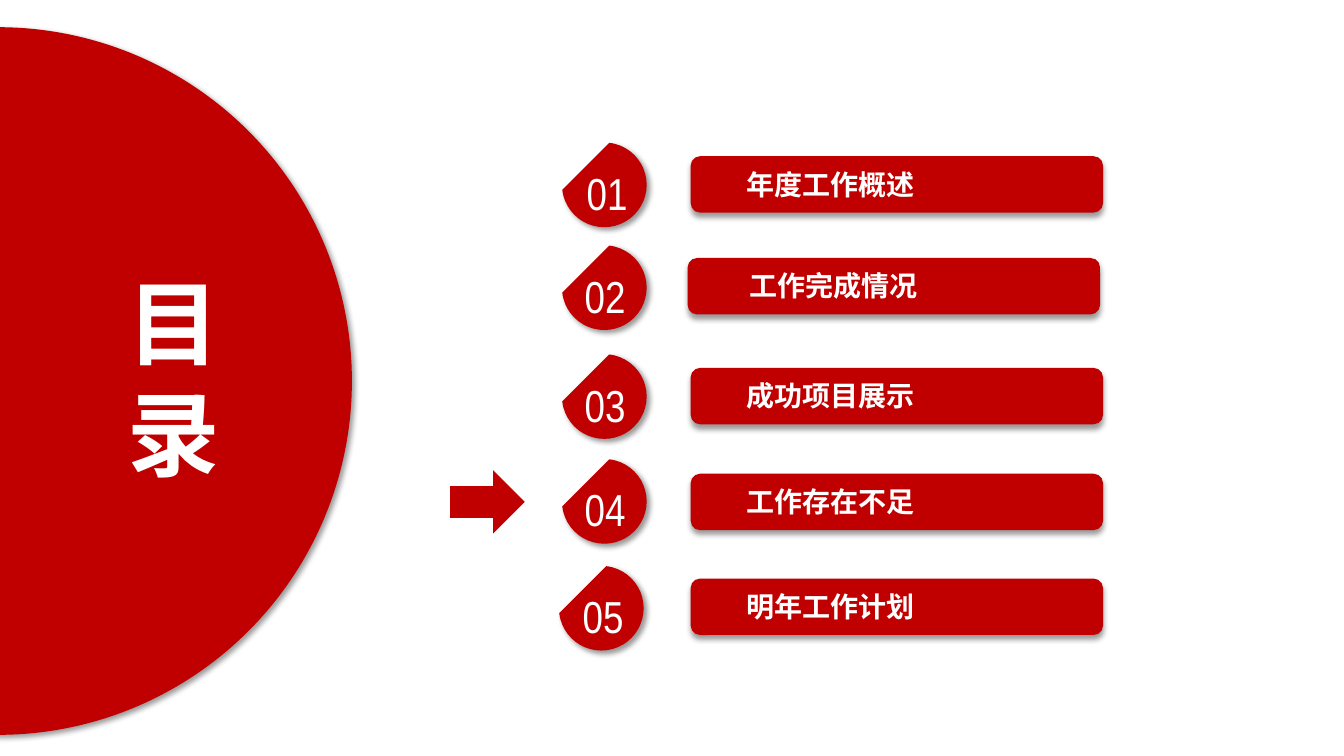
"""Build a contents slide with five numbered sections and an arrow at the fourth."""
import math
from collections import namedtuple

from lxml import etree
from pptx import Presentation
from pptx import util as u
from pptx.dml.color import RGBColor
from pptx.enum import shapes, text
from pptx.oxml.ns import qn

Section = namedtuple(
    "Section", "number label drop_at number_x number_width bar_at label_x label_width")

HEADING = ["目", "录"]
SECTIONS = [
    Section("01", "年度工作概述", (5.63, 1.55), 5.72, 0.62, (6.85, 1.55), 7.27, 2.9),
    Section("02", "工作完成情况", (5.63, 2.57), 5.70, 0.73, (6.82, 2.56), 7.30, 2.9),
    Section("03", "成功项目展示", (5.63, 3.65), 5.70, 0.73, (6.85, 3.65), 7.27, 2.99),
    Section("04", "工作存在不足", (5.63, 4.69), 5.70, 0.73, (6.85, 4.70), 7.27, 2.99),
    Section("05", "明年工作计划", (5.60, 5.75), 5.68, 0.81, (6.85, 5.74), 7.27, 2.99),
]
CURRENT = 3

RED = RGBColor(0xC0, 0x00, 0x00)
WHITE = RGBColor(0xFF, 0xFF, 0xFF)
CJK_FONT, NUMBER_FONT = "Noto Sans CJK SC", "Arial Narrow"
BAR_SIZE = (4.09, 0.56)
LABEL_HEIGHT, NUMBER_HEIGHT = 0.47, 0.64
DROP_RADIUS, DROP_HEIGHT = 0.42, 0.68
ARROW_SIZE = (0.63, 0.74)


def inches(*lengths):
    return [u.Inches(length) for length in lengths]


def paint(shape, shadow_angle=None):
    shape.fill.solid()
    shape.fill.fore_color.rgb = RED
    shape.line.fill.background()
    shape.shadow.inherit = False
    if shadow_angle is not None:
        effects = shape._element.spPr.find(qn("a:effectLst"))
        shadow = etree.SubElement(
            effects, qn("a:outerShdw"), blurRad=str(u.Pt(4)), dist=str(u.Pt(3)),
            dir=str(shadow_angle * 60000), algn="ctr", rotWithShape="0")
        black = etree.SubElement(shadow, qn("a:srgbClr"), val="000000")
        etree.SubElement(black, qn("a:alpha"), val="40000")


def write(shape, lines, size, font, bold, align, insets, spacing=None):
    frame = shape.text_frame
    frame.word_wrap = True
    frame.auto_size = text.MSO_AUTO_SIZE.NONE
    frame.vertical_anchor = text.MSO_ANCHOR.MIDDLE
    frame.margin_left = frame.margin_right = u.Inches(insets[0])
    frame.margin_top = frame.margin_bottom = u.Inches(insets[1])
    for index, line in enumerate(lines):
        paragraph = frame.add_paragraph() if index else frame.paragraphs[0]
        paragraph.alignment = align
        paragraph.space_before = u.Pt(0)
        if spacing:
            paragraph.line_spacing = u.Pt(spacing)
        run = paragraph.add_run()
        run.text = line
        run.font.size, run.font.bold = u.Pt(size), bold
        run.font.color.rgb = WHITE
        run.font.name = font
        etree.SubElement(run.font._element, qn("a:ea"), typeface=font)


def add_drop(group, left, top):
    cut = math.degrees(math.asin((DROP_HEIGHT - DROP_RADIUS) / DROP_RADIUS))
    angles = [180 - cut, 180, 270, 360, 360 + cut]
    corners = [
        inches(left + DROP_RADIUS * (1 + math.cos(math.radians(angle))),
               top + DROP_RADIUS * (1 + math.sin(math.radians(angle))))
        for angle in angles
    ]
    builder = group.shapes.build_freeform(*corners[0])
    builder.add_line_segments(corners[1:], close=True)
    drop = builder.convert_to_shape()
    radius = str(u.Inches(DROP_RADIUS))
    sides = list(drop._element.iter(qn("a:lnTo")))
    for side, start, end in zip(sides, angles, angles[1:]):
        arc = etree.Element(
            qn("a:arcTo"), wR=radius, hR=radius,
            stAng=str(round(start * 60000)), swAng=str(round((end - start) * 60000)))
        side.getparent().replace(side, arc)
    drop.rotation = 135
    paint(drop, 45)


def add_section(slide, section):
    drop_x, drop_y = section.drop_at
    badge = slide.shapes.add_group_shape()
    add_drop(badge, drop_x, drop_y)
    digits = badge.shapes.add_textbox(
        *inches(section.number_x, drop_y + 0.04, section.number_width, NUMBER_HEIGHT))
    write(digits, [section.number], 32, NUMBER_FONT, False, text.PP_ALIGN.LEFT, (0.1, 0.05))

    bar_x, bar_y = section.bar_at
    entry = slide.shapes.add_group_shape()
    bar = entry.shapes.add_shape(
        shapes.MSO_SHAPE.ROUNDED_RECTANGLE, *inches(bar_x, bar_y, *BAR_SIZE))
    paint(bar, 90)
    caption = entry.shapes.add_shape(
        shapes.MSO_SHAPE.RECTANGLE,
        *inches(section.label_x, bar_y + 0.04, section.label_width, LABEL_HEIGHT))
    paint(caption)
    write(caption, [section.label], 20, CJK_FONT, True, text.PP_ALIGN.LEFT, (0.13, 0.07))


def main():
    deck = Presentation()
    deck.slide_width, deck.slide_height = inches(13.33, 7.5)
    slide = deck.slides.add_slide(deck.slide_layouts[5])

    disc = slide.shapes.add_shape(shapes.MSO_SHAPE.OVAL, *inches(-3.53, 0.27, 7.02, 7.02))
    paint(disc, 45)
    heading = slide.shapes.title
    heading.left, heading.top, heading.width, heading.height = inches(1, 2.56, 1.45, 2.36)
    paint(heading)
    write(heading, HEADING, 66, CJK_FONT, True, text.PP_ALIGN.CENTER, (0.13, 0.07), 79)
    disc._element.addnext(heading._element)

    for section in SECTIONS:
        add_section(slide, section)

    arrow_top = SECTIONS[CURRENT].bar_at[1] + (BAR_SIZE[1] - ARROW_SIZE[1]) / 2
    arrow = slide.shapes.add_shape(
        shapes.MSO_SHAPE.DOWN_ARROW, *inches(4.52, arrow_top, *ARROW_SIZE))
    arrow.rotation = 270
    paint(arrow)
    deck.save("out.pptx")


if __name__ == "__main__":
    main()
